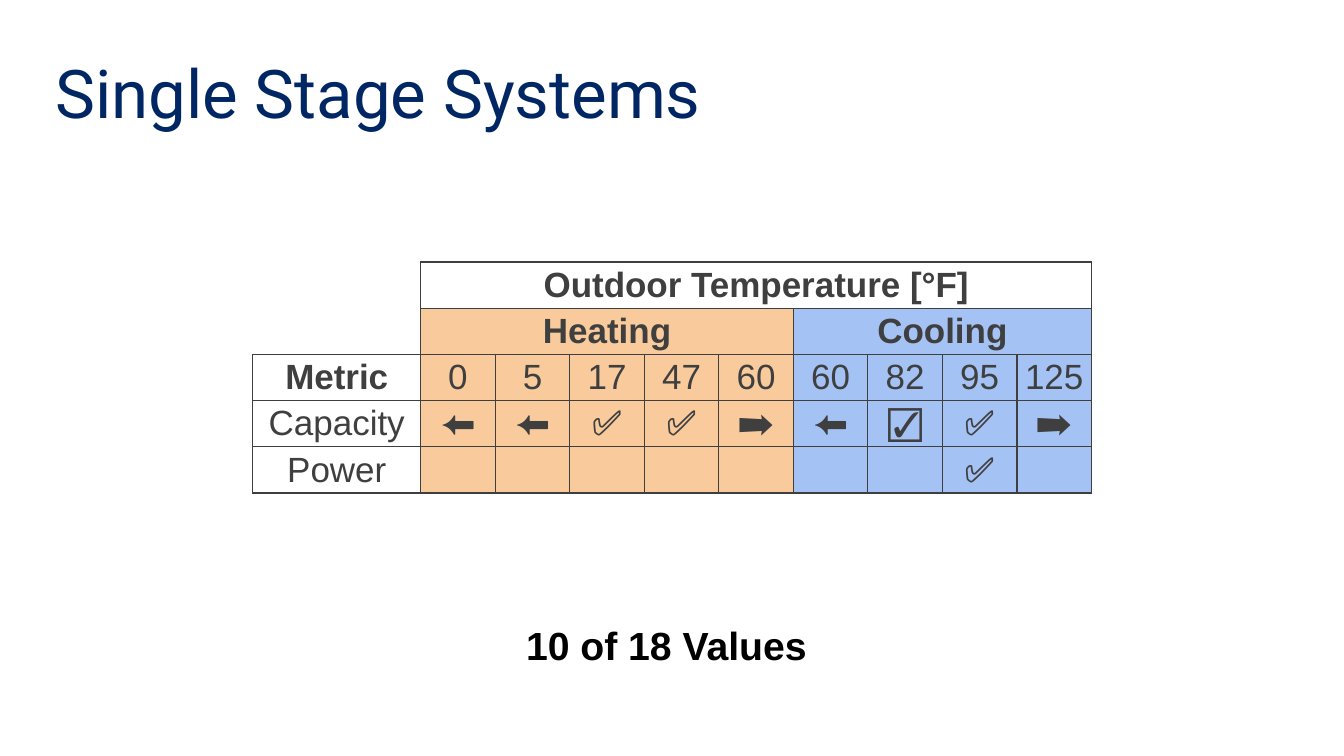
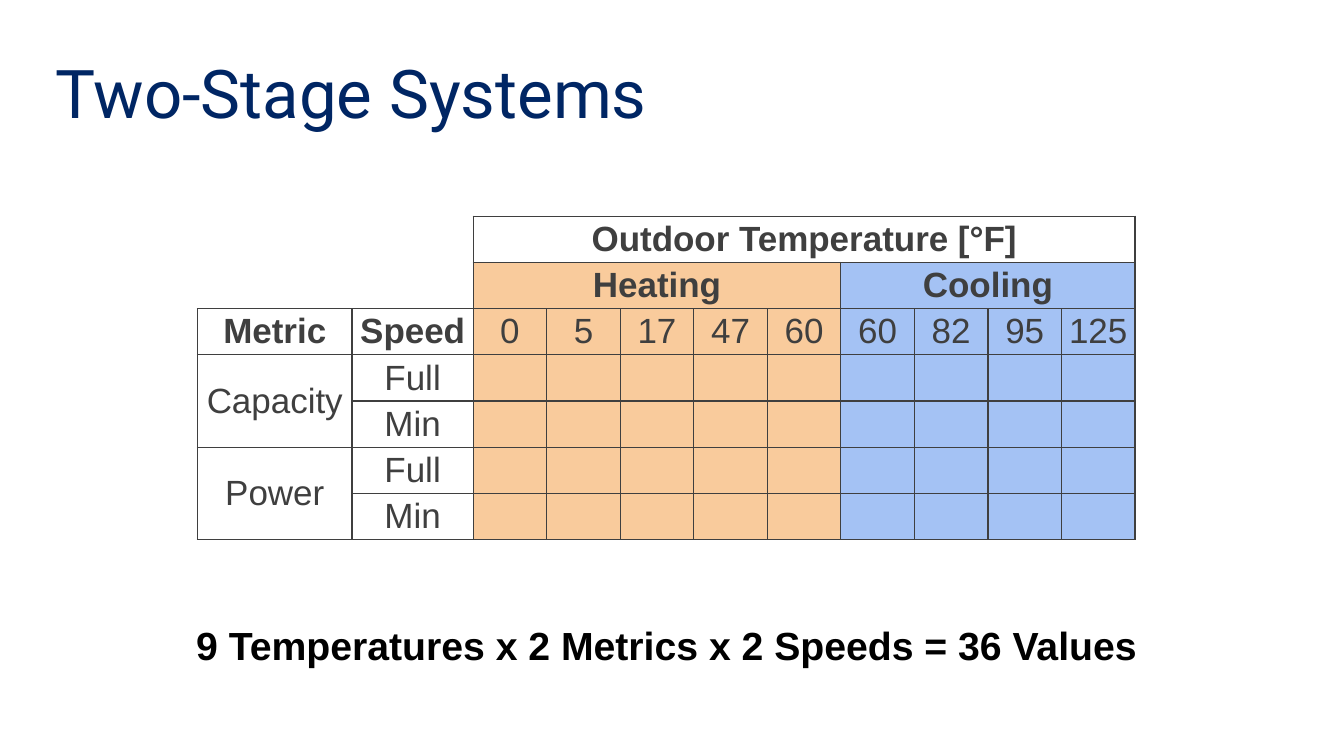
import lxml.etree
import pptx
import pptx.dml.color
import pptx.enum.text
import pptx.oxml.ns
import pptx.util

Pt = pptx.util.Pt
RGBColor = pptx.dml.color.RGBColor
PP_ALIGN = pptx.enum.text.PP_ALIGN
MSO_ANCHOR = pptx.enum.text.MSO_ANCHOR
MSO_AUTO_SIZE = pptx.enum.text.MSO_AUTO_SIZE
qn = pptx.oxml.ns.qn

NAVY = RGBColor(0x00, 0x26, 0x64)
BLACK = RGBColor(0x00, 0x00, 0x00)
GRAY = RGBColor(0x3F, 0x3F, 0x3F)
ORANGE = RGBColor(0xF9, 0xCB, 0x9C)
BLUE = RGBColor(0xA4, 0xC2, 0xF4)

HEATING = ["0", "5", "17", "47", "60"]
COOLING = ["60", "82", "95", "125"]
TEMPS = HEATING + COOLING
HEADER_ROWS = 2
ROW_HEIGHT = 33


class Deck:
    """Shared style and the current slide."""

    def __init__(self):
        self.prs = pptx.Presentation()
        self.prs.slide_width, self.prs.slide_height = Pt(960), Pt(540)
        self.s = None

    def add_run(self, p, text, font, size, color, bold=False):
        r = p.add_run()
        r.text = text
        r.font.name, r.font.size, r.font.bold = font, Pt(size), bold
        r.font.color.rgb = color

    def add_slide(self, title):
        self.s = self.prs.slides.add_slide(self.prs.slide_layouts[5])
        sp = self.s.shapes.title
        sp.left, sp.top, sp.width, sp.height = Pt(32.4), Pt(32.4), Pt(894), Pt(65.5)
        tf = sp.text_frame
        tf.vertical_anchor = MSO_ANCHOR.MIDDLE
        tf.auto_size = MSO_AUTO_SIZE.SHAPE_TO_FIT_TEXT
        p = tf.paragraphs[0]
        p.alignment = PP_ALIGN.LEFT
        self.add_run(p, title, "Roboto", 48, NAVY)

    def add_caption(self, text, width):
        sp = self.s.shapes.add_textbox(Pt(476 - width / 2), Pt(440.6), Pt(width), Pt(41))
        tf = sp.text_frame
        tf.word_wrap = False
        tf.auto_size = MSO_AUTO_SIZE.SHAPE_TO_FIT_TEXT
        p = tf.paragraphs[0]
        p.alignment = PP_ALIGN.CENTER
        self.add_run(p, text, "Arial", 28, BLACK, bold=True)

    def add_borders(self, cell, sides):
        tcPr = cell._tc.get_or_add_tcPr()
        for side in sides:
            ln = lxml.etree.SubElement(tcPr, qn("a:ln" + side), w=str(Pt(1)))
            fill = lxml.etree.SubElement(ln, qn("a:solidFill"))
            lxml.etree.SubElement(fill, qn("a:srgbClr"), val=str(GRAY))

    def add_cell_text(self, cell, text, bold):
        cell.margin_left = cell.margin_right = Pt(2)
        cell.margin_top = cell.margin_bottom = Pt(1.5)
        cell.vertical_anchor = MSO_ANCHOR.MIDDLE
        p = cell.text_frame.paragraphs[0]
        p.alignment = PP_ALIGN.CENTER
        self.add_run(p, text, "Arial", 25, GRAY, bold)

    def add_grid(self, left, top, label_widths, temp_width, labels, body):
        """Table of label columns followed by one column per temperature."""
        n = len(label_widths)
        cool = n + len(HEATING)
        blank = [""] * n
        rows = [
            blank + ["Outdoor Temperature [°F]"] + [""] * (len(TEMPS) - 1),
            blank + ["Heating"] + [""] * (len(HEATING) - 1)
            + ["Cooling"] + [""] * (len(COOLING) - 1),
            labels + TEMPS,
        ] + body
        widths = label_widths + [temp_width] * len(TEMPS)
        tbl = self.s.shapes.add_table(
            len(rows), len(widths), Pt(left), Pt(top),
            Pt(sum(widths)), Pt(ROW_HEIGHT * len(rows))).table
        tbl.first_row = tbl.horz_banding = False
        for column, width in zip(tbl.columns, widths):
            column.width = Pt(width)

        for i, row in enumerate(rows):
            tbl.rows[i].height = Pt(ROW_HEIGHT)
            for j, text in enumerate(row):
                cell = tbl.cell(i, j)
                # The top left corner is open, edged only where it meets the grid
                if i < HEADER_ROWS and j < n:
                    sides = ("R" if j == n - 1 else "") + ("B" if i == HEADER_ROWS - 1 else "")
                else:
                    sides = "LRTB"
                self.add_borders(cell, sides)
                if i == 0 or j < n:
                    cell.fill.background()
                else:
                    cell.fill.solid()
                    cell.fill.fore_color.rgb = ORANGE if j < cool else BLUE
                if text:
                    bold = i < HEADER_ROWS or (i == HEADER_ROWS and j < n)
                    self.add_cell_text(cell, text, bold)

        # Header spans
        last = len(widths) - 1
        for i, start, end in [(0, n, last), (1, n, cool - 1), (1, cool, last)]:
            tbl.cell(i, start).merge(tbl.cell(i, end))
        return tbl


def main():
    deck = Deck()
    empty = [""] * len(TEMPS)

    # Single stage
    deck.add_slide("Single Stage Systems")
    capacity = ["⬅️", "⬅️", "✅", "✅", "➡️", "⬅️", "☑️", "✅", "➡️"]
    power = ["✅" if j == TEMPS.index("95") else "" for j in range(len(TEMPS))]
    deck.add_grid(180.5, 187.2, [120], 53.25, ["Metric"],
                  [["Capacity"] + capacity, ["Power"] + power])
    deck.add_caption("10 of 18 Values", 219)

    # Two stages
    deck.add_slide("Two-Stage Systems")
    deck.add_caption("9 Temperatures x 2 Metrics x 2 Speeds = 36 Values", 698)
    body = [[label, speed] + empty
            for metric in ("Capacity", "Power")
            for label, speed in ((metric, "Full"), ("", "Min"))]
    tbl = deck.add_grid(141, 154.5, [110.5, 86.5], 52.55, ["Metric", "Speed"], body)
    for i in (3, 5):
        tbl.cell(i, 0).merge(tbl.cell(i + 1, 0))

    deck.prs.save("out.pptx")


if __name__ == "__main__":
    main()
